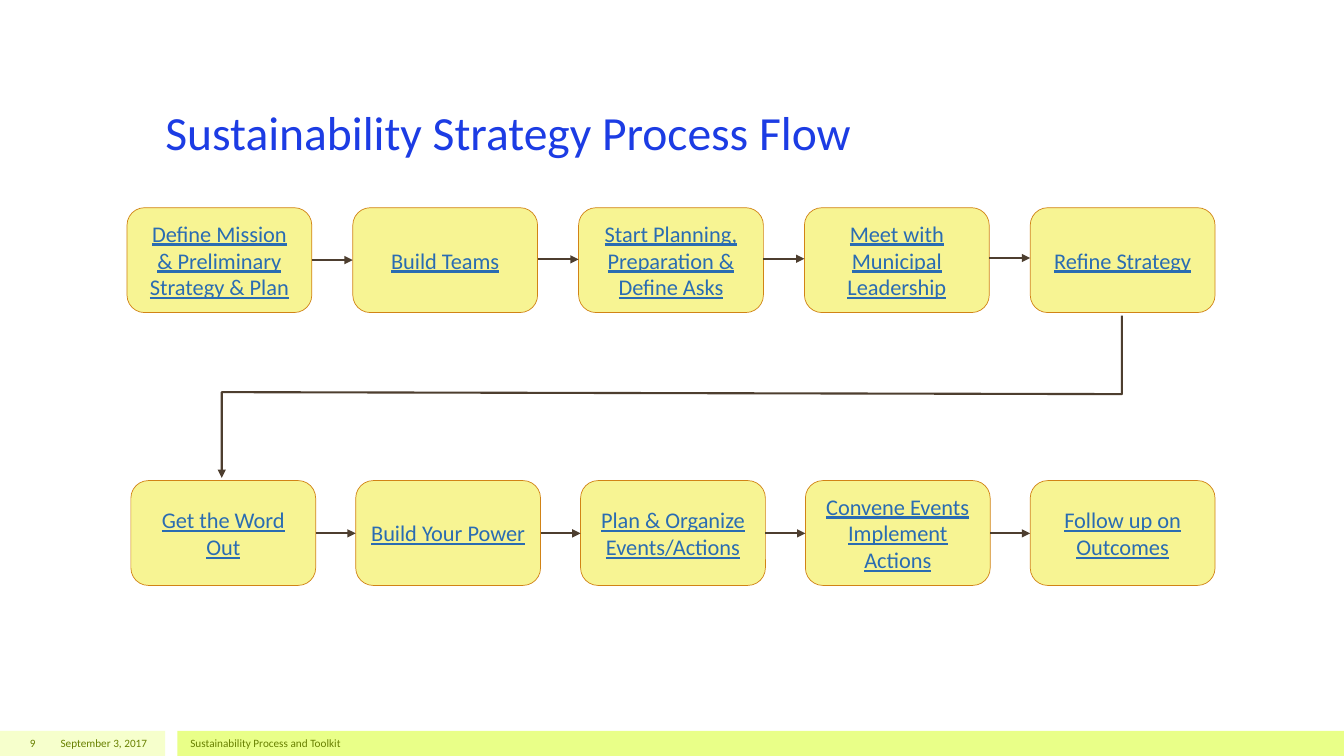
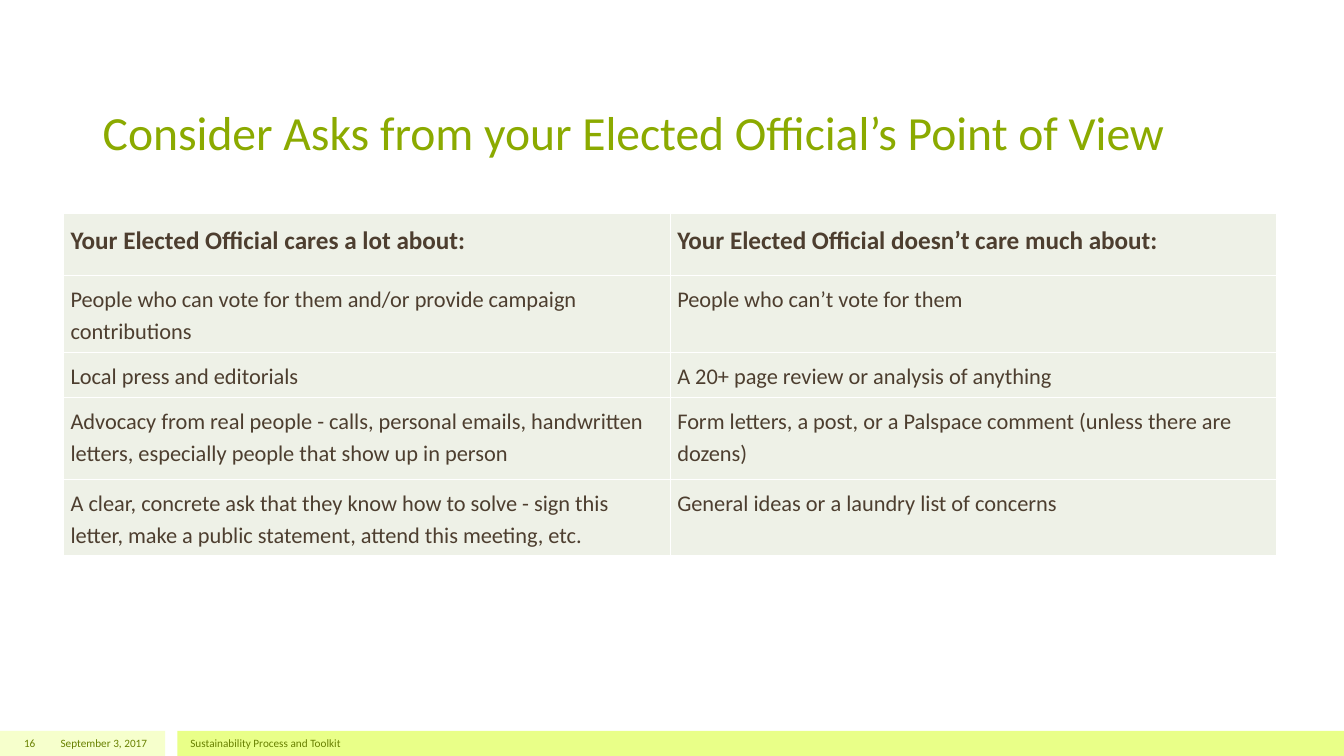
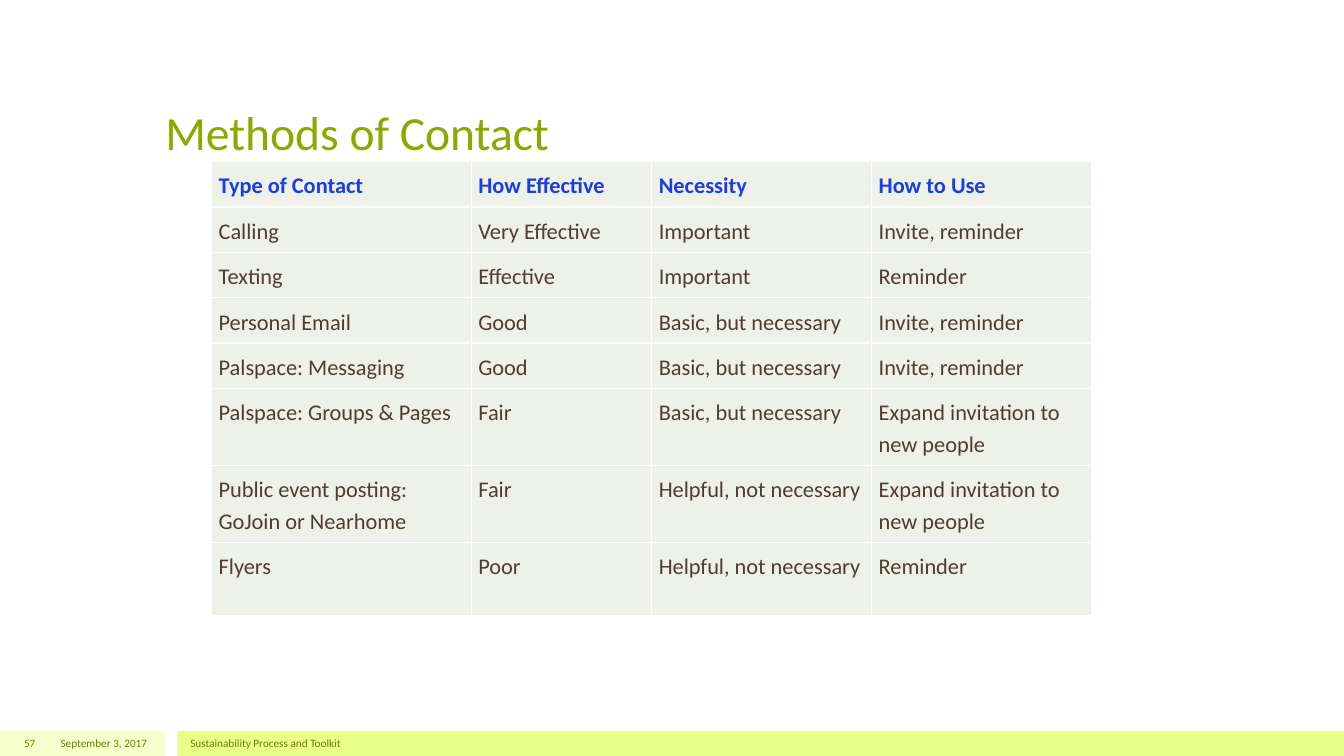
import pptx
import pptx.dml.color
import pptx.enum.shapes
import pptx.enum.text
import pptx.oxml.ns
import pptx.util
import lxml.etree

Pt = pptx.util.Pt
MSO_SHAPE = pptx.enum.shapes.MSO_SHAPE
ALIGN = pptx.enum.text.PP_ALIGN
ANCHOR = pptx.enum.text.MSO_ANCHOR
qn = pptx.oxml.ns.qn

FONT = "Calibri"
BLUE = "1C3CE4"
GREEN = "8BAA00"
BROWN = "4D3E2F"
FOOTER_GREEN = "688000"
LINK_BLUE = "2A6CB2"
CELL_FILL = "EEF1E7"
WHITE = "FFFFFF"


def rgb(value):
    return pptx.dml.color.RGBColor.from_string(value)


def write(frame, text, size, colour, align=ALIGN.LEFT, bold=False, underline=False, spacing=None):
    frame.word_wrap = True
    for index, line in enumerate(text.split("\n")):
        paragraph = frame.add_paragraph() if index else frame.paragraphs[0]
        paragraph.alignment = align
        if spacing:
            paragraph.line_spacing = spacing
        run = paragraph.add_run()
        run.text = line
        run.font.name = FONT
        run.font.size = Pt(size)
        run.font.bold = bold
        run.font.underline = underline
        run.font.color.rgb = rgb(colour)


deck = pptx.Presentation()
deck.slide_width = Pt(960)
deck.slide_height = Pt(540)

pages = [
    ("Sustainability Strategy Process Flow", BLUE, 110.9, 738, "9"),
    ("Consider Asks from your Elected Official’s Point of View", GREEN, 66.2, 804.2, "16"),
    ("Methods of Contact", GREEN, 110.9, 738, "57"),
]
bands = [(0, 118.1, "F6FFCC"), (126.7, 833.3, "E9FF88")]
band_top, band_height = 522, 18

slides = []
for heading, heading_colour, left, width, number in pages:
    slide = deck.slides.add_slide(deck.slide_layouts[5])
    slides.append(slide)

    for band_left, band_width, band_colour in bands:
        band = slide.shapes.add_shape(
            MSO_SHAPE.RECTANGLE, Pt(band_left), Pt(band_top), Pt(band_width), Pt(band_height))
        band.shadow.inherit = False
        band.fill.solid()
        band.fill.fore_color.rgb = rgb(band_colour)
        band.line.fill.background()

    title = slide.shapes.title
    title.left, title.top, title.width, title.height = Pt(left), Pt(21.6), Pt(width), Pt(92.9)
    title.text_frame.auto_size = pptx.enum.text.MSO_AUTO_SIZE.NONE
    title.text_frame.vertical_anchor = ANCHOR.BOTTOM
    title.text_frame.margin_bottom = 0
    write(title.text_frame, heading, 34, heading_colour)

    for text, text_left, text_width, align in [
        ("September 3, 2017", 33.8, 78.5, ALIGN.RIGHT),
        ("Sustainability Process and Toolkit", 128.9, 720, ALIGN.LEFT),
        (number, 0, 32.4, ALIGN.RIGHT),
    ]:
        footer = slide.shapes.add_textbox(
            Pt(text_left), Pt(band_top), Pt(text_width), Pt(band_height)).text_frame
        footer.vertical_anchor = ANCHOR.MIDDLE
        write(footer, text, 8, FOOTER_GREEN, align)

flow = slides[0].shapes
step_width, step_height = 132, 74.9
step_rows = [
    (90.7, 161.3, 148.4, 185.8, -0.5, [
        "Define Mission & Preliminary Strategy & Plan",
        "Build Teams",
        "Start Planning, Preparation & Define Asks",
        "Meet with Municipal Leadership",
        "Refine Strategy",
    ]),
    (93.5, 160.6, 343.3, 381, 0, [
        "Get the Word Out",
        "Build Your Power",
        "Plan & Organize Events/Actions",
        "Convene Events\nImplement Actions",
        "Follow up on Outcomes",
    ]),
]
arrows = []
for first_left, pitch, top, arrow_y, arrow_drift, steps in step_rows:
    for index, label in enumerate(steps):
        left = first_left + index * pitch
        step = flow.add_shape(
            MSO_SHAPE.ROUNDED_RECTANGLE, Pt(left), Pt(top), Pt(step_width), Pt(step_height))
        step.shadow.inherit = False
        step.fill.solid()
        step.fill.fore_color.rgb = rgb("F7F493")
        step.line.color.rgb = rgb("D18316")
        step.line.width = Pt(0.5)
        step.text_frame.vertical_anchor = ANCHOR.MIDDLE
        write(step.text_frame, label, 16, LINK_BLUE, ALIGN.CENTER, underline=True)
        if index:
            y = arrow_y + (index - 1) * arrow_drift
            arrows.append(flow.add_connector(
                pptx.enum.shapes.MSO_CONNECTOR.STRAIGHT,
                Pt(left - pitch + step_width), Pt(y), Pt(left), Pt(y)))

turn = flow.build_freeform(Pt(801.4), Pt(225.4), scale=1.0)
turn.add_line_segments(
    [(Pt(801.4), Pt(281.5)), (Pt(158.4), Pt(280.1)), (Pt(158.4), Pt(341.3))], close=False)
row_link = turn.convert_to_shape()
row_link.fill.background()
arrows.append(row_link)

for arrow in arrows:
    arrow.line.color.rgb = rgb(BROWN)
    arrow.line.width = Pt(1.5)
    properties = arrow.element.find(qn("p:spPr"))
    lxml.etree.SubElement(properties.find(qn("a:ln")), qn("a:tailEnd"), type="triangle")
    lxml.etree.SubElement(properties, qn("a:effectLst"))

official_rows = [
    ("Your Elected Official cares a lot about:", "Your Elected Official doesn’t care much about:"),
    ("People who can vote for them and/or provide campaign contributions",
     "People who can’t vote for them"),
    ("Local press and editorials", "A 20+ page review or analysis of anything"),
    ("Advocacy from real people - calls, personal emails, handwritten letters, "
     "especially people that show up in person",
     "Form letters, a post, or a Palspace comment (unless there are dozens)"),
    ("A clear, concrete ask that they know how to solve - sign this letter, "
     "make a public statement, attend this meeting, etc.",
     "General ideas or a laundry list of concerns"),
]
contact_rows = [
    ("Type of Contact", "How Effective", "Necessity", "How to Use"),
    ("Calling", "Very Effective", "Important", "Invite, reminder"),
    ("Texting", "Effective", "Important", "Reminder"),
    ("Personal Email", "Good", "Basic, but necessary", "Invite, reminder"),
    ("Palspace: Messaging", "Good", "Basic, but necessary", "Invite, reminder"),
    ("Palspace: Groups & Pages", "Fair", "Basic, but necessary", "Expand invitation to new people"),
    ("Public event posting: GoJoin or Nearhome", "Fair", "Helpful, not necessary",
     "Expand invitation to new people"),
    ("Flyers", "Poor", "Helpful, not necessary", "Reminder"),
]
tables = [
    (slides[1], 45.4, 152.8, [433.4] * 2, [44, 54.8, 32.4, 58.3, 54.8],
     18, BROWN, official_rows),
    (slides[2], 151.2, 115.4, [185.5, 128.9, 157.1, 157.1], [32.4] * 5 + [55, 55, 52],
     16, BLUE, contact_rows),
]
for slide, left, top, widths, heights, header_size, header_colour, rows in tables:
    table = slide.shapes.add_table(
        len(rows), len(widths), Pt(left), Pt(top), Pt(sum(widths)), Pt(sum(heights))).table
    table.first_row = table.horz_banding = False
    for column, width in zip(table.columns, widths):
        column.width = Pt(width)
    for row_index, (texts, height) in enumerate(zip(rows, heights)):
        table.rows[row_index].height = Pt(height)
        for column_index, text in enumerate(texts):
            cell = table.cell(row_index, column_index)
            cell.margin_left = cell.margin_right = Pt(5)
            cell.margin_top = cell.margin_bottom = Pt(5)
            header = row_index == 0
            write(cell.text_frame, text, header_size if header else 16,
                  header_colour if header else BROWN, bold=header, spacing=1.15)
            cell_properties = cell._tc.get_or_add_tcPr()
            for edge in ("a:lnL", "a:lnR", "a:lnT", "a:lnB"):
                border = lxml.etree.SubElement(cell_properties, qn(edge), w=str(Pt(1)))
                border_fill = lxml.etree.SubElement(border, qn("a:solidFill"))
                lxml.etree.SubElement(border_fill, qn("a:srgbClr"), val=WHITE)
            cell.fill.solid()
            cell.fill.fore_color.rgb = rgb(CELL_FILL)

deck.save("out.pptx")
